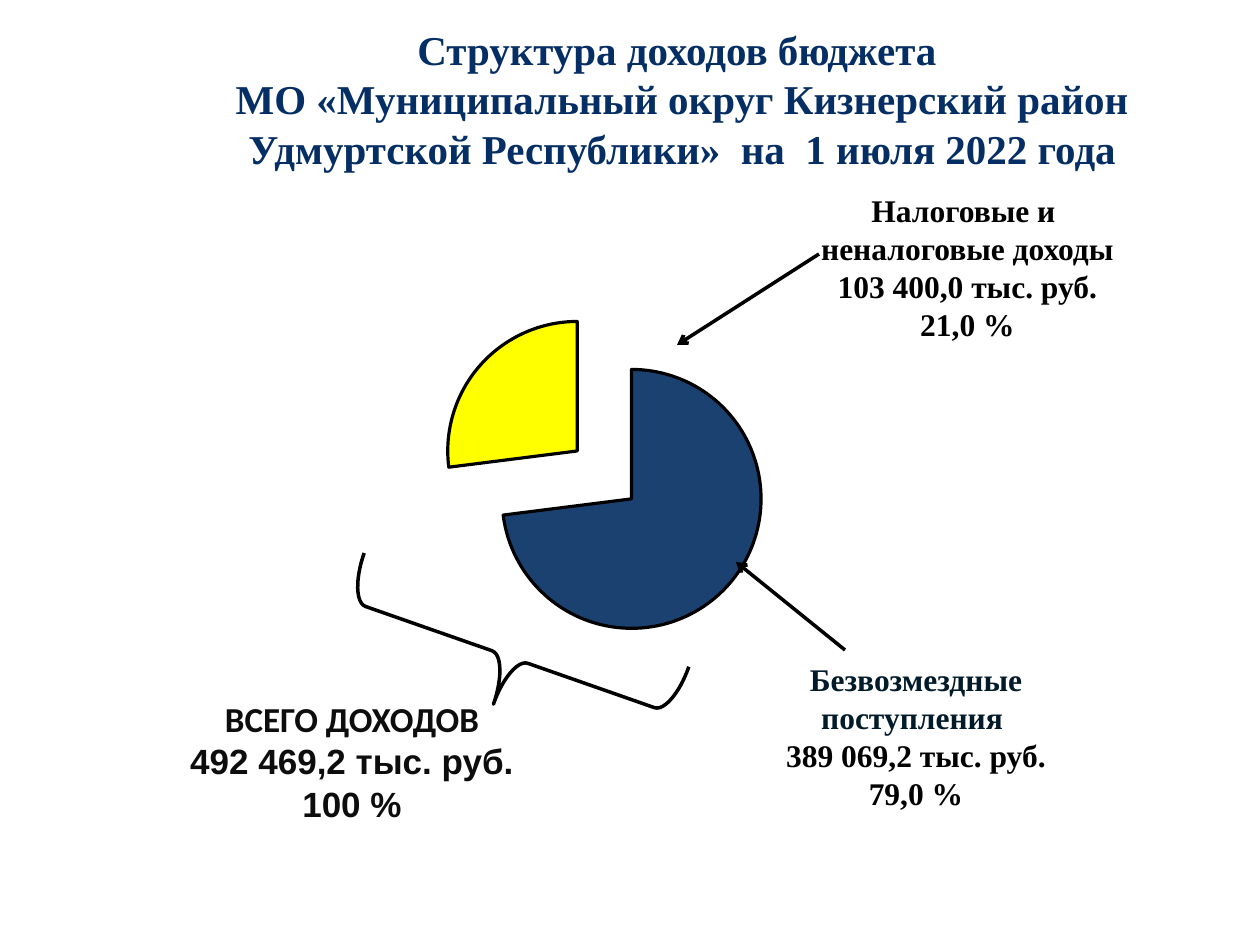
from lxml import etree
from pptx import Presentation
from pptx import util as u
from pptx.chart.data import CategoryChartData
from pptx.dml.color import RGBColor
from pptx.enum import chart, shapes, text
from pptx.oxml.ns import qn

EMU_PER_PX = 914400 / 126
BLACK = RGBColor(0x00, 0x00, 0x00)
WHITE = RGBColor(0xFF, 0xFF, 0xFF)
TITLE_BLUE = RGBColor(0x05, 0x2E, 0x65)
DARK_TEAL = RGBColor(0x02, 0x1B, 0x2B)
NEAR_BLACK = RGBColor(0x0D, 0x0D, 0x0D)
PIE_BLUE = RGBColor(0x1B, 0x41, 0x71)
PIE_YELLOW = RGBColor(0xFF, 0xFF, 0x00)
SERIF = "Times New Roman"


def px(n):
    return u.Emu(round(n * EMU_PER_PX))


def write(p, content, font=SERIF, size=18, color=BLACK):
    """Fill a centred bold paragraph; each line after the first follows a break."""
    p.alignment = text.PP_ALIGN.CENTER
    for i, line in enumerate(content.split("\n")):
        if i:
            p.add_line_break()
        r = p.add_run()
        r.text = line
        r.font.name, r.font.size, r.font.bold = font, u.Pt(size), True
        r.font.color.rgb = color


class SlideBuilder:
    line_color = BLACK
    line_width = u.Pt(2)

    def __init__(self, slide):
        self.s = slide

    def label(self, box, lines, anchor=text.MSO_ANCHOR.TOP, fill=None):
        """Add a text box; lines are (content, format) pairs."""
        sp = self.s.shapes.add_textbox(*map(px, box))
        if fill is not None:
            sp.fill.solid()
            sp.fill.fore_color.rgb = fill
        tf = sp.text_frame
        tf.word_wrap, tf.vertical_anchor = True, anchor
        for i, (content, style) in enumerate(lines):
            p = tf.add_paragraph() if i else tf.paragraphs[0]
            write(p, content, **style)

    def pie(self, box, categories, values, colors, explosions, layout):
        data = CategoryChartData()
        data.categories = categories
        data.add_series("Series 1", values)
        ch = self.s.shapes.add_chart(
            chart.XL_CHART_TYPE.PIE, *map(px, box), data).chart
        ch.has_legend = ch.has_title = False
        ch.font.name, ch.font.size, ch.font.bold = "Roboto", u.Pt(11.1), True
        ch.font.color.rgb = BLACK
        plot = ch.plots[0]
        plot.vary_by_categories = True
        series = plot.series[0]
        for i, color in enumerate(colors):
            fmt = series.points[i].format
            fmt.fill.solid()
            fmt.fill.fore_color.rgb = color
            fmt.line.color.rgb = self.line_color
            fmt.line.width = u.Pt(1.8)
        # The series value reserves room for the slices that are pulled out
        points = series._element.findall(qn("c:dPt"))
        points[0].addprevious(
            etree.Element(qn("c:explosion"), val=str(max(explosions))))
        for point, val in zip(points, explosions):
            point.find(qn("c:spPr")).addprevious(
                etree.Element(qn("c:explosion"), val=str(val)))
        # Fix the inner plot area
        area = ch._chartSpace.find(".//" + qn("c:plotArea"))
        for old in area.findall(qn("c:layout")):
            area.remove(old)
        outer = etree.Element(qn("c:layout"))
        area.insert(0, outer)
        manual = etree.SubElement(outer, qn("c:manualLayout"))
        settings = {"layoutTarget": "inner", "xMode": "edge", "yMode": "edge"}
        settings.update(zip("xywh", layout))
        for tag, val in settings.items():
            etree.SubElement(manual, qn("c:" + tag), val=str(val))

    def brace(self, box, rotation, adjustments):
        sp = self.s.shapes.add_shape(shapes.MSO_SHAPE.LEFT_BRACE, *map(px, box))
        sp.rotation = rotation
        for i, val in enumerate(adjustments):
            sp.adjustments[i] = val
        sp.shadow.inherit = False
        sp.fill.background()
        sp.line.color.rgb, sp.line.width = self.line_color, self.line_width

    def arrow(self, start, end):
        cx = self.s.shapes.add_connector(
            shapes.MSO_CONNECTOR.STRAIGHT, *map(px, start + end))
        cx.line.color.rgb, cx.line.width = self.line_color, self.line_width
        etree.SubElement(cx.line._get_or_add_ln(), qn("a:tailEnd"), type="arrow")
        etree.SubElement(cx._element.spPr, qn("a:effectLst"))


def main():
    prs = Presentation()
    prs.slide_width, prs.slide_height = px(1260), px(945)
    b = SlideBuilder(prs.slides.add_slide(prs.slide_layouts[6]))
    middle = text.MSO_ANCHOR.MIDDLE

    # Title
    title = ("Структура доходов бюджета \nМО «Муниципальный округ Кизнерский район "
             "Удмуртской Республики»  на  1 июля 2022 года")
    b.label((124, 30, 1116, 137),
            [(title, dict(size=23.4, color=TITLE_BLUE))], anchor=middle)

    # Income pie
    b.pie((175, 249, 752, 444), ("1", "2"), (73, 27), (PIE_BLUE, PIE_YELLOW),
          explosions=(56, 0), layout=(0.14, 0, 0.79, 0.91))

    # Income labels
    b.label((759, 185, 417, 165),
            [(line, {}) for line in ("Налоговые и ", "неналоговые доходы",
                                     "103 400,0 тыс. руб.", "21,0 %")], fill=WHITE)
    teal = dict(color=DARK_TEAL)
    b.label((725, 654, 382, 165),
            [("Безвозмездные", teal), ("поступления ", teal),
             ("389 069,2 тыс. руб.", {}), ("79,0 %", {})])

    # Total with its brace
    b.brace((460, 485, 100, 344), 289.3, (0.19, 0.5))
    total = dict(font="Arial", size=20, color=NEAR_BLACK)
    b.label((167, 706, 370, 110),
            [("ВСЕГО ДОХОДОВ", {**total, "font": "Calibri"}),
             ("492 469,2 тыс. руб.", total), ("100 %", total)], anchor=middle)

    # Arrows from the labels to the pie
    b.arrow((819, 254), (677, 345))
    b.arrow((845, 650), (736, 562))

    prs.save("out.pptx")


if __name__ == "__main__":
    main()
